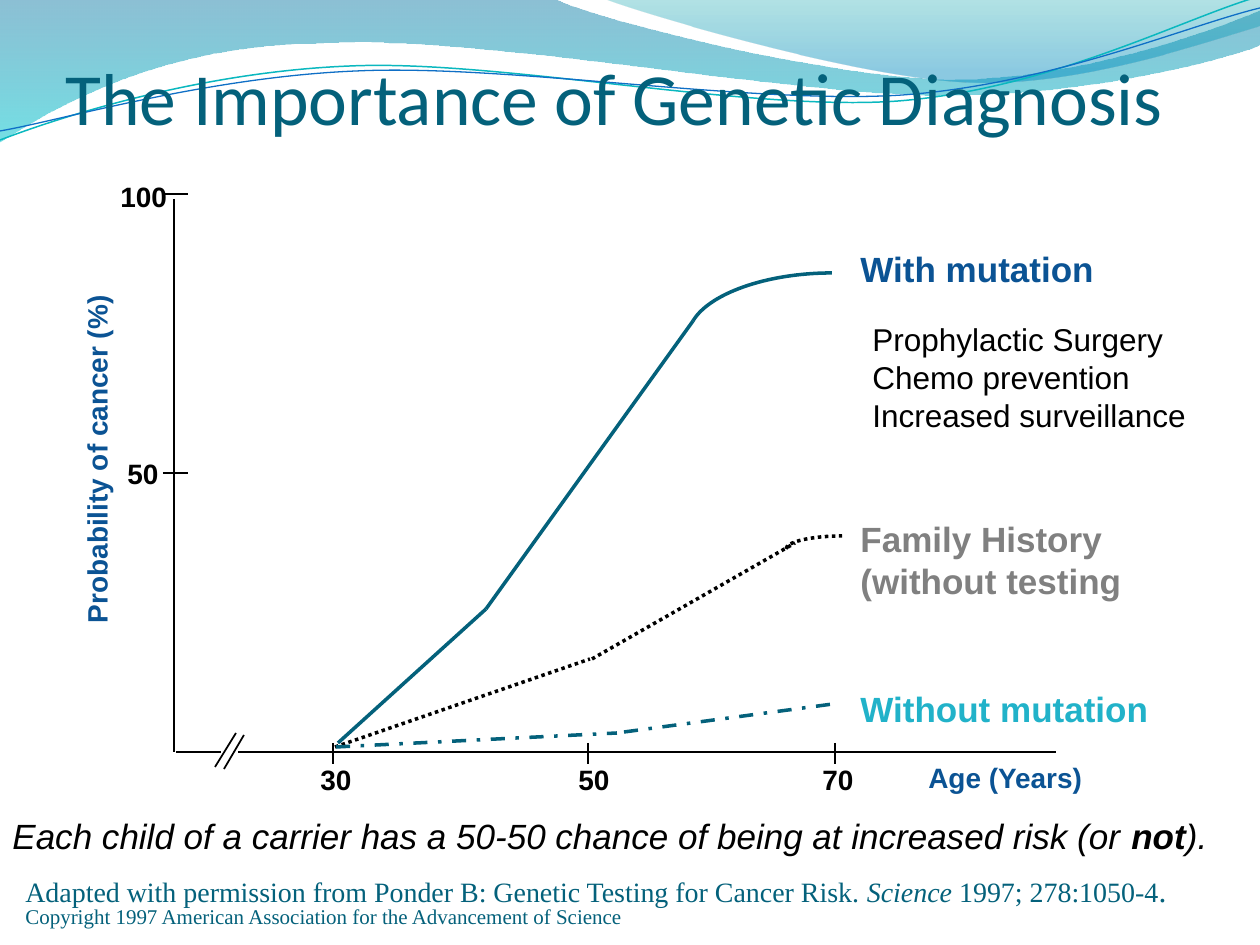
from lxml.etree import SubElement
from pptx import Presentation
from pptx.dml.color import RGBColor
from pptx.enum.dml import MSO_LINE as Dash
from pptx.enum.shapes import MSO_CONNECTOR as Conn
from pptx.enum.text import MSO_ANCHOR as Anchor, MSO_AUTO_SIZE as Auto, PP_ALIGN as Align
from pptx.oxml.ns import qn
from pptx.util import Pt

PX = 914400 / 126

BLACK = RGBColor(0x00, 0x00, 0x00)
TEAL = RGBColor(0x04, 0x61, 0x7B)
NAVY = RGBColor(0x0B, 0x53, 0x94)
GRAY = RGBColor(0x80, 0x80, 0x80)
AQUA = RGBColor(0x21, 0xB2, 0xC9)
CYAN = RGBColor(0x0A, 0xB8, 0xBF)
BLUE = RGBColor(0x0F, 0x6F, 0xC6)
DEEP = RGBColor(0x00, 0x74, 0xA1)
POOL = RGBColor(0x00, 0xC6, 0xCF)
SEA = RGBColor(0x00, 0xA1, 0xA9)
SKY = RGBColor(0x00, 0x8B, 0xBF)

TITLE = "The Importance of Genetic Diagnosis"

BANDS = [
    ([(0, -1), (554, -1), (600, 21, 837, 79, 955, 79), (1075, 79, 1207, 33, 1260, 11),
      (1261, 45), (1239, 55, 1096, 96, 940, 95), (784, 95, 481, 35, 324, 43),
      (163, 44, 58, 105, -1, 142)], [(0, DEEP, 45), (1, POOL, 55)]),
    ([(604, -1), (641, 14, 859, 78, 969, 82), (1079, 87, 1211, 40, 1260, 26),
      (1260, 0)], [(0, SEA, 30), (0.8, SKY, 45)]),
]
CURVES = [
    ([(0, 140), (60, 117, 199, 72, 349, 66), (498, 59, 747, 112, 898, 101),
      (1050, 89, 1182, 19, 1257, -3)], CYAN, 0.85, None),
    ([(0, 131), (59, 121, 207, 77, 357, 71), (508, 64, 752, 105, 903, 95),
      (1053, 84, 1186, 26, 1260, 8)], BLUE, 0.75, None),
    ([(786, 549), (786, 542, 811, 536, 842, 536)], BLACK, 2, Dash.ROUND_DOT),
    ([(693, 321), (709, 294, 766, 273, 832, 273)], TEAL, 2, None),
]

BASE = 752
AXES = [(174, 199, 174, BASE), (238, BASE, 1056, BASE), (176, BASE, 221, BASE),
        (215, 767, 236, 733), (224, 769, 244, 735)]
AGES = [("30", 333, 308), ("50", 588, 566), ("70", 835, 810)]
RISKS = [("100", 194, 108, 173, 72), ("50", 473, 115, 450, 57)]
SERIES = [
    ([(335, 747, 590, 659), (592, 659, 795, 543)], BLACK, Dash.ROUND_DOT),
    ([(338, 743, 486, 609), (486, 609, 693, 321)], TEAL, None),
    ([(336, 747, 617, 733), (624, 732, 833, 704)], TEAL, Dash.DASH_DOT),
]

KEYS = [
    ((848, 241, 260, 54), NAVY, ["With mutation"]),
    ((848, 511, 286, 97), GRAY, ["Family History", "(without testing"]),
    ((848, 681, 315, 54), AQUA, ["Without mutation"]),
]
CARE = ["Prophylactic Surgery", "Chemo prevention", "Increased surveillance"]
CHANCE = [("Each child of a carrier has a 50-50 chance of being at increased risk (or ", 20, "i"),
          ("not", 20, "bi"), (").", 20, "i")]
CREDIT = [
    [("Adapted with permission from Ponder B: Genetic Testing for Cancer Risk.", 16, ""),
     (" Science", 16, "i"), (" 1997; 278:1050-4", 16, ""), (".", 18, "")],
    [("Copyright 1997 American Association for the Advancement of Science", 12, "")],
]


def emu(px):
    return round(px * PX)


def outline(path, close):
    pts = [part[k:k + 2] for part in path for k in range(0, len(part), 2)]
    pen = shapes.build_freeform(*pts[0], scale=PX)
    pen.add_line_segments(pts[1:], close=close)
    shape = pen.convert_to_shape()
    shape.shadow.inherit = False
    track = next(shape._element.iter(qn("a:path")))
    legs = iter(track.findall(qn("a:lnTo")))
    for part in path[1:]:
        leg = next(legs)
        if len(part) == 6:
            leg.tag = qn("a:cubicBezTo")
            for _ in range(2):
                spare = next(legs)
                leg.append(spare[0])
                track.remove(spare)
    return shape


def band(path, stops):
    shape = outline(path, True)
    shape.line.fill.background()
    shape.fill.gradient()
    shape.fill.gradient_angle = 270
    for stop, (place, color, _) in zip(shape.fill.gradient_stops, stops):
        stop.position = place
        stop.color.rgb = color
    tints = list(shape._element.spPr.iter(qn("a:srgbClr")))
    for tint, (_, _, alpha) in zip(tints, stops):
        SubElement(tint, qn("a:alpha"), val=str(alpha * 1000))


def ink(line, color, width, dash):
    line.color.rgb = color
    line.width = Pt(width)
    if dash:
        line.dash_style = dash


def curve(path, color, width, dash):
    shape = outline(path, False)
    shape.fill.background()
    ink(shape.line, color, width, dash)


def rule(ends, color=BLACK, width=1, dash=None):
    line = shapes.add_connector(Conn.STRAIGHT, *map(emu, ends))
    ink(line.line, color, width, dash)
    SubElement(line._element.spPr, qn("a:effectLst"))


def write(para, runs, color, font):
    para.alignment = Align.LEFT
    for text, size, style in runs:
        run = para.add_run()
        run.text = text
        run.font.name = font
        run.font.size = Pt(size)
        run.font.bold = "b" in style
        run.font.italic = "i" in style
        run.font.color.rgb = color


def label(box, paras, color=BLACK, font="Arial", wrap=False, turn=0, space=None):
    shape = shapes.add_textbox(*map(emu, box))
    shape.rotation = turn
    frame = shape.text_frame
    frame.word_wrap = wrap
    frame.auto_size = Auto.SHAPE_TO_FIT_TEXT
    for n, runs in enumerate(paras):
        para = frame.add_paragraph() if n else frame.paragraphs[0]
        if space:
            para.line_spacing = space
        write(para, runs, color, font)


deck = Presentation()
deck.slide_width, deck.slide_height = emu(1260), emu(945)
slide = deck.slides.add_slide(deck.slide_layouts[5])
shapes = slide.shapes

for path, stops in BANDS:
    band(path, stops)
for item in CURVES:
    curve(*item)

title = shapes.title
title.left, title.top, title.width, title.height = map(emu, (53, 63, 1166, 84))
frame = title.text_frame
frame.word_wrap = True
frame.auto_size = Auto.NONE
frame.vertical_anchor = Anchor.BOTTOM
write(frame.paragraphs[0], [(TITLE, 42, "")], TEAL, "Calibri")
shapes._spTree.append(title._element)

for ends in AXES:
    rule(ends)
for text, x, left in AGES:
    rule((x, 743, x, 764))
    label((left, 756, 57, 47), [[(text, 16, "b")]])
for text, y, left, top, wide in RISKS:
    rule((163, y, 188, y))
    label((left, top, wide, 47), [[(text, 16, "b")]])
label((-82, 433, 358, 47), [[("Probability of cancer (%)", 16, "b")]], NAVY, turn=270)
label((916, 754, 180, 47), [[("Age (Years)", 16, "b")]], NAVY)

for lines, color, dash in SERIES:
    for ends in lines:
        rule(ends, color, 2, dash)
for box, color, texts in KEYS:
    label(box, [[(text, 20, "b")] for text in texts], color)

label((860, 314, 350, 127), [[(text, 18, "")] for text in CARE])
label((13, 872, 1173, 63), CREDIT, TEAL, "Times New Roman", space=0.8)
label((0, 808, 1241, 54), [CHANCE], wrap=True)

deck.save("out.pptx")
